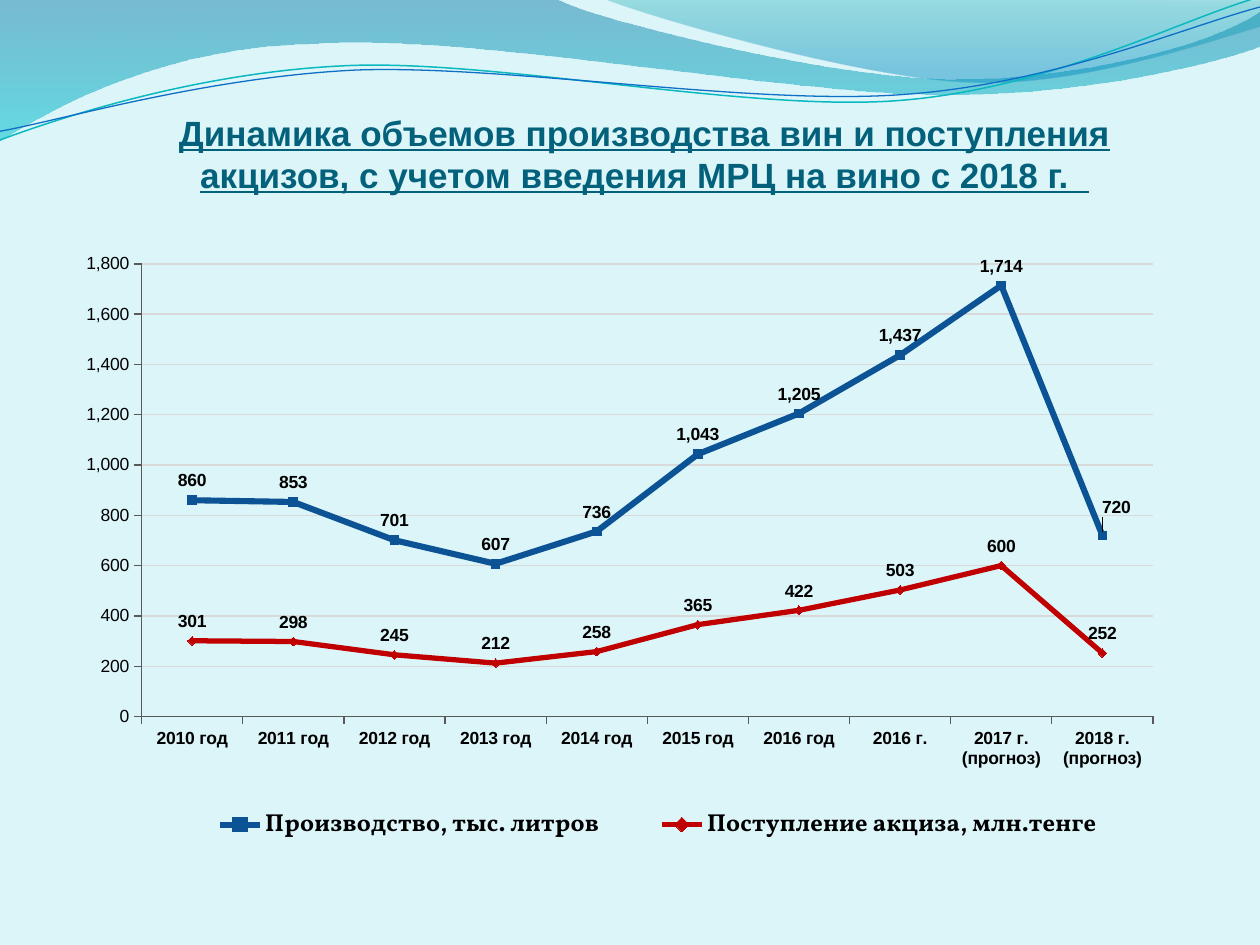
from math import cos, radians, sin

from lxml import etree
from pptx import Presentation
from pptx.chart.data import CategoryChartData
from pptx.dml.color import RGBColor
from pptx.enum.chart import XL_CHART_TYPE as ChartType, XL_LABEL_POSITION as LabelPosition
from pptx.enum.chart import XL_LEGEND_POSITION as LegendPosition, XL_MARKER_STYLE as Marker
from pptx.enum.chart import XL_TICK_MARK as TickMark
from pptx.enum.text import MSO_ANCHOR as Anchor, PP_ALIGN as Align
from pptx.oxml import parse_xml
from pptx.oxml.ns import qn
from pptx.util import Pt

DRAWING_NS = "http://schemas.openxmlformats.org/drawingml/2006/main"
CHART_NS = "http://schemas.openxmlformats.org/drawingml/2006/chart"
RIBBON_TURN = -2.7

# Box, outline and colours, in points: a pair is a straight step, six numbers a curve
WAVES = [
    ((-1, -1, 722, 82),
     [(0, 0), (317, -1), (343, 12, 478, 45, 546, 45), (614, 45, 690, 27, 720, 6.5),
      (721, 26), (708, 32, 626, 55, 537, 54), (448, 54, 275, 20, 185, 24.5),
      (93, 26, 33, 60, -1, 81), (0, 0)],
     [(0, "0074A1", 45), (100, "00C6CF", 55)]),
    ((345, -1, 375, 50.4),
     [(345, -1), (366, 8, 491, 45, 554, 47), (616, 50, 692, 23, 720, 15), (720, 0),
      (345, -1)],
     [(0, "00A1A9", 30), (80, "008BBF", 45)]),
]
RIBBONS = [
    ((-1.4, 15.8, 721.4, 51.1),
     [(0, 80), (35, 67, 114, 41, 199, 37.5), (284, 34, 427, 64, 513, 57.5),
      (600, 51, 675, 11, 719, -1.5)], "0AB8BF", 0.85),
    ((-1.4, 21.6, 722.2, 41.8),
     [(0, 75), (34, 69, 118, 44, 204, 40), (290, 37, 430, 60.5, 516, 54),
      (602, 48, 678, 15, 720, 4)], "0F6FC6", 0.75),
]

YEARS = [f"{year} год" for year in range(2010, 2017)] + [
    "2016 г.", "2017 г. (прогноз)", "2018 г. (прогноз)"]
# Name, values, colour, line width, marker, marker size, label format
SERIES = [
    ("Производство, тыс. литров", (860, 853, 701, 607, 736, 1043, 1205, 1437, 1714, 720),
     "0B5394", 3.5, Marker.SQUARE, 5, "#,##0"),
    ("Поступление акциза, млн.тенге", (301, 298, 245, 212, 258, 365, 422, 503, 600, 252),
     "C00000", 3, Marker.DIAMOND, 5, "0"),
]


def color(hex_value):
    return RGBColor.from_string(hex_value)


def apply_format(target, values):
    for name, value in values.items():
        setattr(target, name, value)


def set_line(line, hex_value, width):
    line.color.rgb = color(hex_value)
    line.width = Pt(width)


def add_outline(shapes, box, segments, closed, turn=0):
    """Draw steps and curves in a box, which is turned about its middle."""
    left, top, width, height = box
    builder = shapes.build_freeform(Pt(left), Pt(top))
    builder.add_line_segments([(Pt(left + width), Pt(top + height))], close=closed)
    shape = builder.convert_to_shape()
    shape.shadow.inherit = False
    shape.rotation = turn % 360
    cosine, sine = cos(radians(-turn)), sin(radians(-turn))
    outline = shape.element.find(f".//{qn('a:path')}")
    for step in list(outline):
        outline.remove(step)
    for index, segment in enumerate(segments):
        kind = "moveTo" if index == 0 else "lnTo" if len(segment) == 2 else "cubicBezTo"
        step = etree.SubElement(outline, qn(f"a:{kind}"))
        for x, y in zip(segment[::2], segment[1::2]):
            across, down = x - left - width / 2, y - top - height / 2
            point = etree.SubElement(step, qn("a:pt"))
            point.set("x", str(Pt(width / 2 + across * cosine - down * sine)))
            point.set("y", str(Pt(height / 2 + across * sine + down * cosine)))
    if closed:
        etree.SubElement(outline, qn("a:close"))
    return shape


def set_gradient(shape, stops):
    """Fill from top to bottom with partly transparent colours."""
    shape.fill.background()
    marks = "".join(
        f'<a:gs pos="{position * 1000}"><a:srgbClr val="{hex_value}">'
        f'<a:alpha val="{opacity * 1000}"/></a:srgbClr></a:gs>'
        for position, hex_value, opacity in stops)
    gradient = parse_xml(f'<a:gradFill xmlns:a="{DRAWING_NS}"><a:gsLst>{marks}</a:gsLst>'
                         '<a:lin ang="5400000" scaled="0"/></a:gradFill>')
    properties = shape.element.spPr
    properties.replace(properties.find(qn("a:noFill")), gradient)


def add_waves(slide):
    for box, segments, stops in WAVES:
        wave = add_outline(slide.shapes, box, segments, True)
        set_gradient(wave, stops)
        wave.line.fill.background()
    group = slide.shapes.add_group_shape()
    for box, segments, hex_value, width in RIBBONS:
        ribbon = add_outline(group.shapes, box, segments, False, RIBBON_TURN)
        ribbon.fill.background()
        set_line(ribbon.line, hex_value, width)


def add_title(slide, left, top, width, height):
    title = slide.shapes.title
    apply_format(title, {"left": Pt(left), "top": Pt(top),
                         "width": Pt(width), "height": Pt(height)})
    apply_format(title.text_frame, {"word_wrap": True, "vertical_anchor": Anchor.MIDDLE})
    paragraph = title.text_frame.paragraphs[0]
    paragraph.alignment = Align.CENTER
    run = paragraph.add_run()
    run.text = ("Динамика объемов производства вин и поступления акцизов, "
                "с учетом введения МРЦ на вино с 2018 г.  ")
    apply_format(run.font, {"name": "Arial", "size": Pt(20), "bold": True, "underline": True})
    run.font.color.rgb = color("04617B")


def set_layout(parent, index, **values):
    """Give a chart part a manual place, in fractions of the chart."""
    for old in parent.findall(qn("c:layout")):
        parent.remove(old)
    layout = etree.Element(qn("c:layout"), nsmap={"c": CHART_NS})
    manual = etree.SubElement(layout, qn("c:manualLayout"))
    for name, value in values.items():
        etree.SubElement(manual, qn(f"c:{name}")).set("val", str(value))
    parent.insert(index, layout)


def format_axes(chart):
    for axis, bold in ((chart.category_axis, True), (chart.value_axis, False)):
        axis.major_tick_mark = TickMark.OUTSIDE
        axis.minor_tick_mark = TickMark.NONE
        apply_format(axis.tick_labels.font, {"name": "Arial", "size": Pt(10), "bold": bold})
        set_line(axis.format.line, "595959", 0.75)
    axis = chart.value_axis
    apply_format(axis, {"minimum_scale": 0, "maximum_scale": 1800, "major_unit": 200,
                        "has_major_gridlines": True})
    apply_format(axis.tick_labels, {"number_format": "#,##0", "number_format_is_linked": False})
    set_line(axis.major_gridlines.format.line, "D9D9D9", 0.75)


def format_series(series, hex_value, width, marker, marker_size, number_format):
    label_font = {"name": "Arial", "size": Pt(10), "bold": True}
    series.smooth = False
    set_line(series.format.line, hex_value, width)
    apply_format(series.marker, {"style": marker, "size": marker_size})
    series.marker.format.fill.solid()
    series.marker.format.fill.fore_color.rgb = color(hex_value)
    set_line(series.marker.format.line, hex_value, 0.75)
    labels = series.data_labels
    apply_format(labels, {"show_value": True, "position": LabelPosition.ABOVE,
                          "number_format": number_format, "number_format_is_linked": False})
    apply_format(labels.font, label_font)
    return label_font


def add_line_chart(slide, left, top, width, height):
    data = CategoryChartData()
    data.categories = YEARS
    for name, values, *_ in SERIES:
        data.add_series(name, values)
    chart = slide.shapes.add_chart(ChartType.LINE_MARKERS, Pt(left), Pt(top),
                                   Pt(width), Pt(height), data).chart
    chart.has_title = False
    apply_format(chart.font, {"name": "Vollkorn", "size": Pt(10)})
    chart.font.color.rgb = color("000000")
    chart.plots[0].vary_by_categories = False
    format_axes(chart)
    for series, (_, _, *style) in zip(chart.plots[0].series, SERIES):
        label_font = format_series(series, *style)

    # The last production label stands clear of the falling line
    last_label = chart.plots[0].series[0].points[len(YEARS) - 1].data_label
    last_label.position = LabelPosition.ABOVE
    apply_format(last_label.font, label_font)
    set_layout(chart.element.find(f".//{qn('c:dLbl')}"), 1, x=8 / width, y=-5.2 / height)

    # Legend and plot area
    chart.has_legend = True
    apply_format(chart.legend, {"position": LegendPosition.RIGHT, "include_in_layout": False})
    apply_format(chart.legend.font, {"name": "Vollkorn", "size": Pt(14), "bold": True})
    set_layout(chart.element.find(f".//{qn('c:legend')}"), 1, xMode="edge", yMode="edge",
               x=52.4 / width, y=317.3 / height, w=563 / width, h=28.6 / height)
    set_layout(chart.element.find(f".//{qn('c:plotArea')}"), 0, layoutTarget="inner",
               xMode="edge", yMode="edge",
               x=38.4 / width, y=11.1 / height, w=578 / width, h=258.7 / height)


def main():
    presentation = Presentation()
    apply_format(presentation, {"slide_width": Pt(720), "slide_height": Pt(540)})
    slide = presentation.slides.add_slide(presentation.slide_layouts[5])
    slide.background.fill.solid()
    slide.background.fill.fore_color.rgb = color("DBF5F9")
    add_waves(slide)
    add_line_chart(slide, 42.5, 139.7, 639.4, 357.8)
    add_title(slide, 70.6, 60, 595.4, 55.4)
    presentation.save("out.pptx")


if __name__ == "__main__":
    main()
